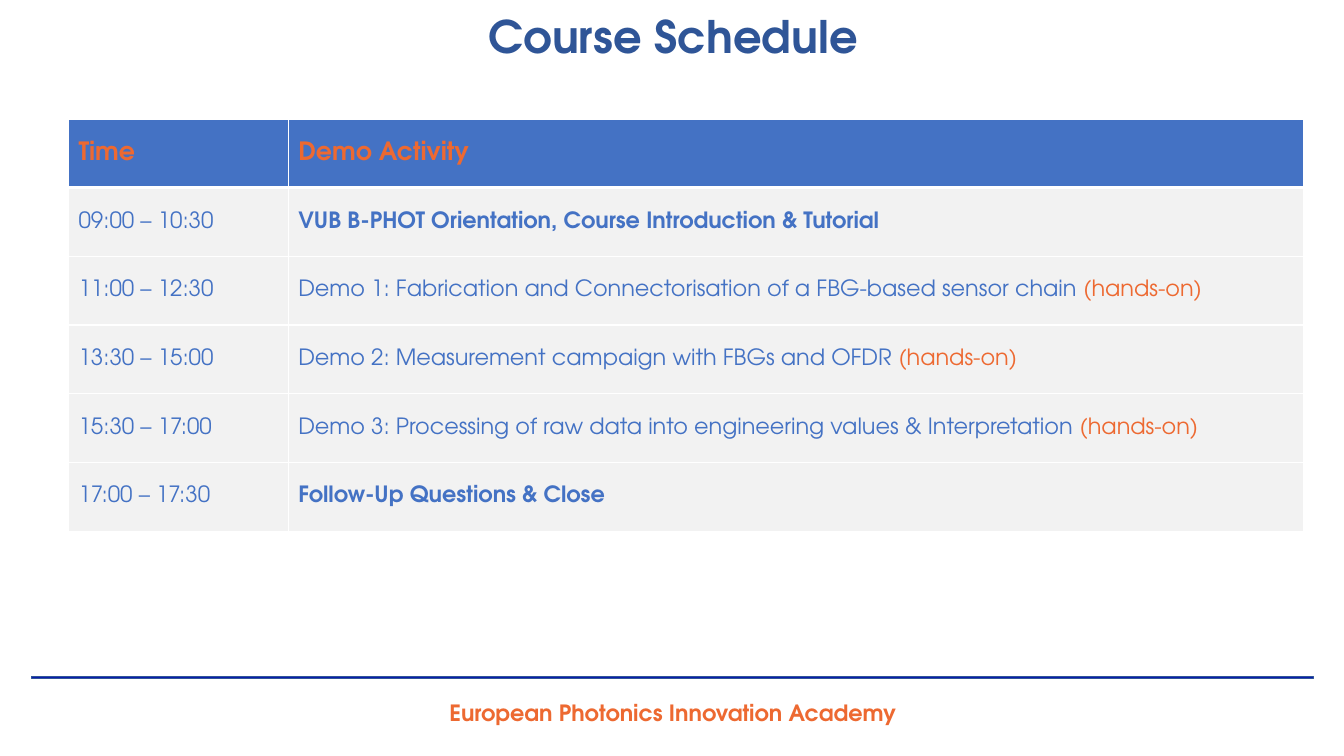
from dataclasses import dataclass

from lxml import etree
from pptx import Presentation, util as u
from pptx.dml.color import RGBColor
from pptx.enum import shapes, text
from pptx.oxml import ns


@dataclass(frozen=True)
class Theme:
    font: str = "TeX Gyre Adventor"
    navy: str = "2F5597"
    blue: str = "4472C4"
    rule: str = "0A1CAD"
    orange: str = "ED6931"
    grey: str = "F2F2F2"
    white: str = "FFFFFF"
    title: int = 32
    header: int = 18
    body: int = 16


class Deck:
    """Draws themed elements on one slide, placed in percent of its size."""

    def __init__(self, prs, theme):
        self.prs, self.theme = prs, theme
        self.s = prs.slides.add_slide(prs.slide_layouts[6])

    def x(self, share):
        return round(self.prs.slide_width * share / 100)

    def y(self, share):
        return round(self.prs.slide_height * share / 100)

    def box(self, left, top, width, height):
        return self.x(left), self.y(top), self.x(width), self.y(height)

    def style(self, p, size, color, bold=False):
        f = p.font
        f.name, f.size, f.bold = self.theme.font, u.Pt(size), bold
        f.color.rgb = RGBColor.from_string(color)

    def label(self, words, area, size, color):
        tf = self.s.shapes.add_textbox(*self.box(*area)).text_frame
        tf.word_wrap = False
        tf.auto_size = text.MSO_AUTO_SIZE.SHAPE_TO_FIT_TEXT
        p = tf.paragraphs[0]
        p.text, p.alignment = words, text.PP_ALIGN.CENTER
        self.style(p, size, color, True)

    def bar(self, area, fill, line):
        sp = self.s.shapes.add_shape(shapes.MSO_SHAPE.RECTANGLE, *self.box(*area))
        sp.shadow.inherit = False
        sp.fill.solid()
        sp.fill.fore_color.rgb = RGBColor.from_string(fill)
        sp.line.color.rgb = RGBColor.from_string(line)
        sp.line.width = u.Pt(1)

    def borders(self, cell, top, bottom):
        tc_pr = cell._tc.get_or_add_tcPr()
        for side, width in (("L", 1), ("R", 1), ("T", top), ("B", bottom)):
            ln = etree.SubElement(tc_pr, ns.qn(f"a:ln{side}"), w=str(u.Pt(width)))
            fill = etree.SubElement(ln, ns.qn("a:solidFill"))
            etree.SubElement(fill, ns.qn("a:srgbClr"), val=self.theme.white)

    def cell(self, cell, words, row, bold, note=""):
        t = self.theme
        head = row == 0
        self.borders(cell, 3 if row == 1 else 1, 3 if head else 1)
        cell.fill.solid()
        cell.fill.fore_color.rgb = RGBColor.from_string(t.blue if head else t.grey)
        cell.vertical_anchor = text.MSO_ANCHOR.MIDDLE
        p = cell.text_frame.paragraphs[0]
        p.text = words
        self.style(p, t.header if head else t.body, t.orange if head else t.blue, bold)
        if note:
            r = p.add_run()
            r.text = note
            r.font.color.rgb = RGBColor.from_string(t.orange)

    def schedule(self, rows, area, first_column):
        table = self.s.shapes.add_table(len(rows), 2, *self.box(*area)).table
        table.horz_banding = False
        table.columns[0].width = self.x(first_column)
        table.columns[1].width = self.x(area[2] - first_column)
        for i, (time, activity, note) in enumerate(rows):
            self.cell(table.cell(i, 0), time, i, i == 0)
            self.cell(table.cell(i, 1), activity, i, not note, note)


HANDS_ON = "(hands-on)"
SCHEDULE = [
    ("Time", "Demo Activity", ""),
    ("09:00 – 10:30", "VUB B-PHOT Orientation, Course Introduction & Tutorial", ""),
    ("11:00 – 12:30", "Demo 1: Fabrication and Connectorisation of a FBG-based sensor chain ", HANDS_ON),
    ("13:30 – 15:00", "Demo 2: Measurement campaign with FBGs and OFDR ", HANDS_ON),
    ("15:30 – 17:00", "Demo 3: Processing of raw data into engineering values & Interpretation ", HANDS_ON),
    ("17:00 – 17:30", "Follow-Up Questions & Close", ""),
]


def main():
    prs = Presentation()
    prs.slide_width, prs.slide_height = u.Inches(13.33), u.Inches(7.5)
    t = Theme()
    deck = Deck(prs, t)
    deck.label("Course Schedule", (35.4, 0.53, 29.4, 8.53), t.title, t.navy)
    deck.label("European Photonics Innovation Academy", (32.63, 91.87, 34.88, 4.93), t.body, t.orange)
    deck.bar((2.33, 89.47, 95.4, 0.27), t.rule, t.navy)
    deck.schedule(SCHEDULE, (5.1, 15.73, 91.9, 54.53), 16.35)
    prs.save("out.pptx")


if __name__ == "__main__":
    main()
